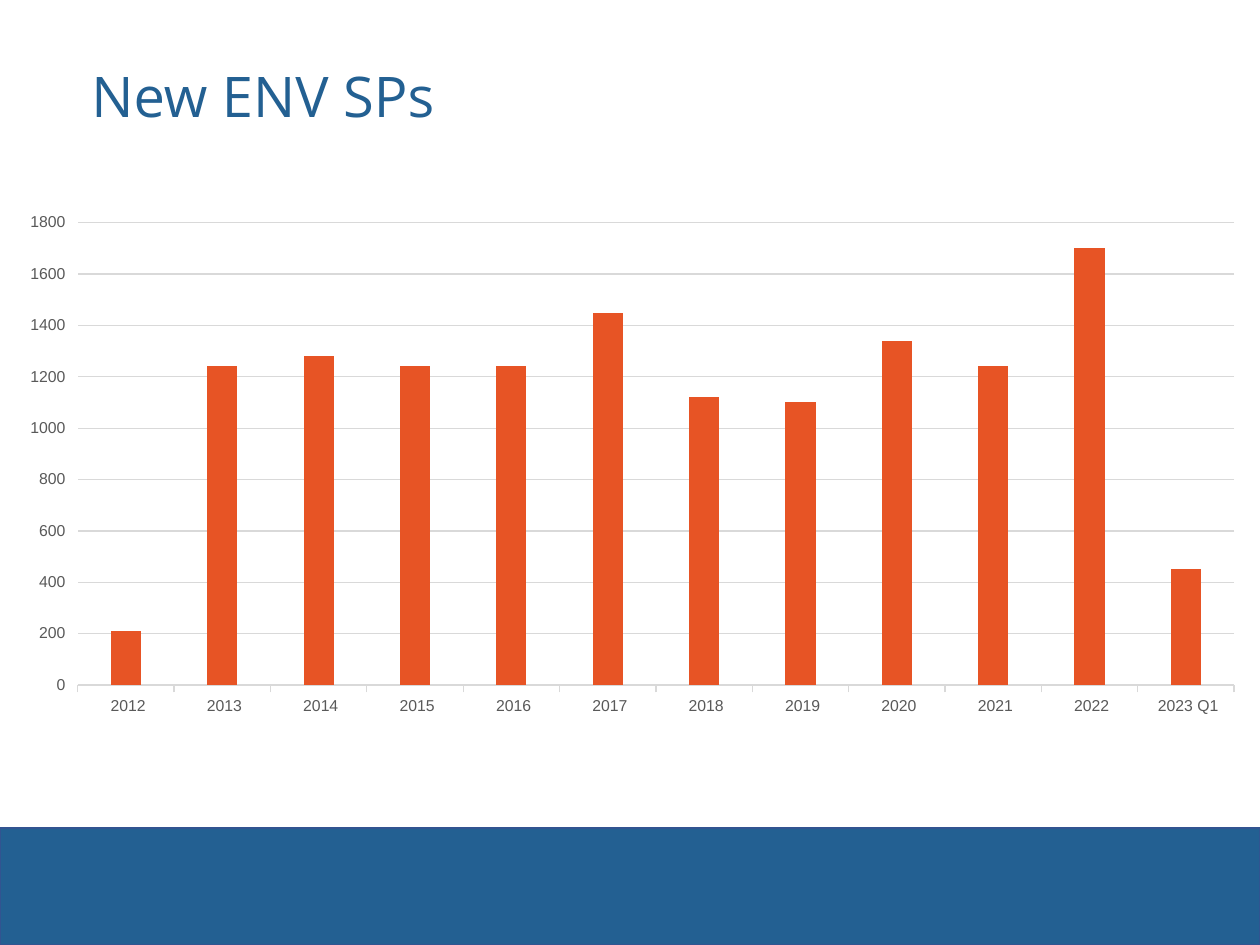
from lxml.etree import SubElement
from pptx import Presentation
from pptx.chart.data import CategoryChartData
from pptx.dml.color import RGBColor
from pptx.enum.chart import XL_CHART_TYPE, XL_TICK_MARK
from pptx.enum.shapes import MSO_SHAPE
from pptx.enum.text import MSO_ANCHOR, PP_ALIGN
from pptx.oxml.ns import qn
from pptx.util import Pt

BLUE = RGBColor(0x23, 0x60, 0x92)
BORDER_BLUE = RGBColor(0x32, 0x54, 0x91)
ORANGE = RGBColor(0xE7, 0x54, 0x25)
GRID_GRAY = RGBColor(0xD9, 0xD9, 0xD9)
LABEL_GRAY = RGBColor(0x59, 0x59, 0x59)
BLACK = RGBColor(0, 0, 0)

PERIODS = [f" {year}" for year in range(2012, 2023)] + [" 2023 Q1"]
NEW_SPS = [210, 1240, 1280, 1240, 1240, 1450, 1120, 1100, 1340, 1240, 1700, 450]


def place(shape, box):
    """Move a shape to a left, top, width, height box in points."""
    shape.left, shape.top, shape.width, shape.height = map(Pt, box)


def add_footer_band(page, box):
    """Add the plain band along the foot of the page."""
    band = page.shapes.add_shape(MSO_SHAPE.RECTANGLE, *map(Pt, box))
    band.shadow.inherit = False
    band.fill.solid()
    band.fill.fore_color.rgb = BLUE
    band.line.color.rgb = BORDER_BLUE
    band.line.width = Pt(1)


def set_title(page, box, text):
    """Fill and format the title placeholder."""
    title = page.shapes.title
    place(title, box)
    frame = title.text_frame
    frame.text = text
    frame.word_wrap = True
    frame.vertical_anchor = MSO_ANCHOR.MIDDLE
    para = frame.paragraphs[0]
    para.alignment = PP_ALIGN.LEFT
    para.line_spacing = 0.9
    font = para.runs[0].font
    font.name, font.size = "Open Sans", Pt(32)
    font.color.rgb = BLUE


def set_font(font, size, color):
    """Give chart text its typeface, size and colour."""
    font.name, font.size = "Arial", Pt(size)
    font.color.rgb = color


def set_line(line):
    """Draw a thin light gray chart line."""
    line.color.rgb = GRID_GRAY
    line.width = Pt(0.75)


def set_plot_layout(chart, fractions):
    """Fix the inner plot area as fractions of the chart."""
    plot_area = chart.plots[0]._element.getparent()
    layout = plot_area.find(qn("c:layout"))
    if layout is None:
        layout = SubElement(plot_area, qn("c:layout"))
        plot_area.insert(0, layout)
    manual = SubElement(layout, qn("c:manualLayout"))
    settings = [("layoutTarget", "inner"), ("xMode", "edge"), ("yMode", "edge")]
    settings += zip("xywh", fractions)
    for name, value in settings:
        SubElement(manual, qn(f"c:{name}")).set("val", str(value))


def add_column_chart(page, box):
    """Add the column chart of new SPs by period."""
    data = CategoryChartData()
    data.categories = PERIODS
    data.add_series("Series 1", NEW_SPS)
    chart = page.shapes.add_chart(
        XL_CHART_TYPE.COLUMN_CLUSTERED, *map(Pt, box), data
    ).chart
    chart.has_title = False
    chart.has_legend = False
    set_font(chart.font, 10, BLACK)
    set_plot_layout(chart, (0.063, 0.053, 0.937, 0.891))

    plot = chart.plots[0]
    plot.vary_by_categories = False
    plot.gap_width, plot.overlap = 219, -27
    fill = plot.series[0].format.fill
    fill.solid()
    fill.fore_color.rgb = ORANGE

    for axis in (chart.category_axis, chart.value_axis):
        set_font(axis.tick_labels.font, 9, LABEL_GRAY)
        axis.major_tick_mark = XL_TICK_MARK.OUTSIDE
    set_line(chart.category_axis.format.line)
    values = chart.value_axis
    values.format.line.fill.background()
    values.minimum_scale, values.maximum_scale, values.major_unit = 0, 1800, 200
    values.has_major_gridlines = True
    set_line(values.major_gridlines.format.line)


def main():
    """Build and save the slide."""
    deck = Presentation()
    deck.slide_width, deck.slide_height = Pt(720), Pt(540)
    page = deck.slides.add_slide(deck.slide_layouts[5])
    add_footer_band(page, (0, 473, 720, 67))
    set_title(page, (45, 30, 630, 54), "New ENV SPs")
    add_column_chart(page, (0, 111.6, 705.6, 297.4))
    deck.save("out.pptx")


if __name__ == "__main__":
    main()
